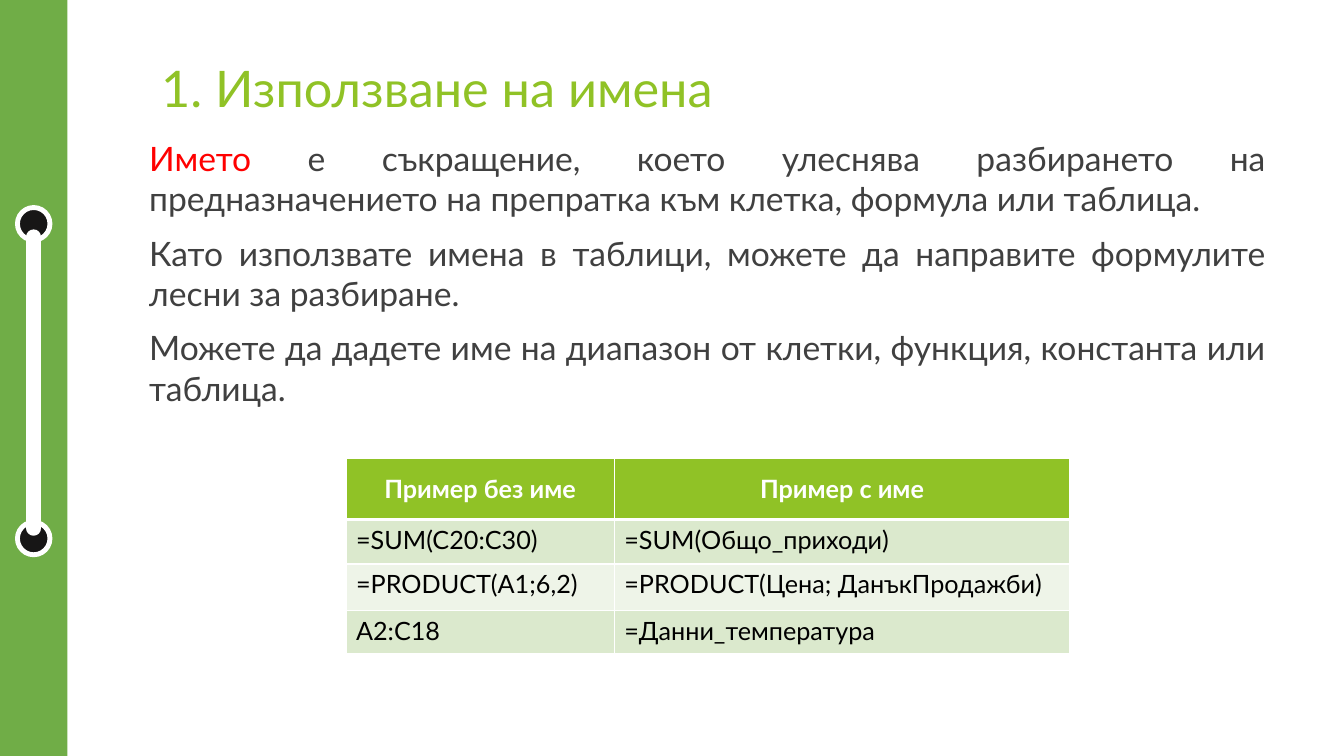
from lxml.etree import SubElement
from pptx import Presentation
from pptx.dml.color import RGBColor
from pptx.enum.shapes import MSO_CONNECTOR, MSO_SHAPE
from pptx.enum.text import MSO_ANCHOR, PP_ALIGN
from pptx.oxml.ns import qn
from pptx.util import Cm, Pt

FONT = "Lato"
GREEN, WHITE, DARK, RED = "90C226", "FFFFFF", "404040", "FF0000"
TITLE = [[("1. Използване на имена", GREEN)]]
BODY = [
    [("Името", RED),
     (" е съкращение, което улеснява разбирането на предназначението на "
      "препратка към клетка, формула или таблица.", DARK)],
    [("Като използвате имена в таблици, можете да направите формулите "
      "лесни за разбиране.", DARK)],
    [("Можете да дадете име на диапазон от клетки, функция, константа или "
      "таблица.", DARK)],
]
EXAMPLES = [
    ("Пример без име", "Пример с име"),
    ("=SUM(C20:C30)", "=SUM(Общо_приходи)"),
    ("=PRODUCT(A1;6,2)", "=PRODUCT(Цена; ДанъкПродажби)"),
    ("A2:C18", "=Данни_температура"),
]
COL_WIDTHS = (6.76, 11.48)
ROW_HEIGHTS = (1.55, 1.12, 1.17, 1.09)
ROW_FILLS = (GREEN, "DBE9CD", "EEF4E8", "DBE9CD")
BAR_WIDTH = 1.7
DOT_SIZE = 0.82
DOT_TOPS = (5.23, 13.16)
ROD = (5.97, 13.31)


def rgb(value):
    return RGBColor.from_string(value)


def add_run(p, text, size, color, bold=False):
    r = p.add_run()
    r.text = text
    r.font.name, r.font.size, r.font.bold = FONT, Pt(size), bold
    r.font.color.rgb = rgb(color)


def add_text(s, box, paragraphs, size, align=PP_ALIGN.LEFT, before=0):
    tf = s.shapes.add_textbox(*map(Cm, box)).text_frame
    tf.word_wrap = True
    for i, runs in enumerate(paragraphs):
        p = tf.paragraphs[0] if i == 0 else tf.add_paragraph()
        p.alignment, p.space_before = align, Pt(before)
        for text, color in runs:
            add_run(p, text, size, color)


def add_solid(s, kind, box, color, outline=0):
    sp = s.shapes.add_shape(kind, *map(Cm, box))
    sp.shadow.inherit = False
    sp.fill.solid()
    sp.fill.fore_color.rgb = rgb(color)
    if outline:
        sp.line.color.rgb, sp.line.width = rgb(WHITE), Pt(outline)
    else:
        sp.line.fill.background()


def add_border(cell, side, width):
    ln = SubElement(cell._tc.get_or_add_tcPr(), qn("a:ln" + side), w=str(Pt(width)))
    SubElement(SubElement(ln, qn("a:solidFill")), qn("a:srgbClr"), val=WHITE)


def add_rail(s):
    add_solid(s, MSO_SHAPE.RECTANGLE, (0, 0, BAR_WIDTH, 19.05), "70AD47")
    for top in DOT_TOPS:
        left = (BAR_WIDTH - DOT_SIZE) / 2
        add_solid(s, MSO_SHAPE.OVAL, (left, top, DOT_SIZE, DOT_SIZE), "171616", 3.5)
    x = Cm(BAR_WIDTH / 2)
    rod = s.shapes.add_connector(MSO_CONNECTOR.STRAIGHT, x, Cm(ROD[0]), x, Cm(ROD[1]))
    rod.line.color.rgb, rod.line.width = rgb(WHITE), Pt(10.75)
    rod.line._get_or_add_ln().set("cap", "rnd")
    SubElement(rod._element.spPr, qn("a:effectLst"))


def add_examples(s):
    size = Cm(sum(COL_WIDTHS)), Cm(sum(ROW_HEIGHTS))
    table = s.shapes.add_table(len(EXAMPLES), 2, Cm(8.72), Cm(11.54), *size).table
    table.horz_banding = False
    for col, width in zip(table.columns, COL_WIDTHS):
        col.width = Cm(width)
    for i, texts in enumerate(EXAMPLES):
        table.rows[i].height = Cm(ROW_HEIGHTS[i])
        header = i == 0
        for j, text in enumerate(texts):
            cell = table.cell(i, j)
            widths = {"L": 1, "R": 1, "T": 3 if i == 1 else 1, "B": 3 if header else 1}
            for side, width in widths.items():
                add_border(cell, side, width)
            cell.fill.solid()
            cell.fill.fore_color.rgb = rgb(ROW_FILLS[i])
            cell.vertical_anchor = MSO_ANCHOR.MIDDLE if header else MSO_ANCHOR.TOP
            p = cell.text_frame.paragraphs[0]
            p.alignment = PP_ALIGN.CENTER if header else PP_ALIGN.LEFT
            add_run(p, text, 18, WHITE if header else "000000", header)


def main():
    prs = Presentation()
    prs.slide_width, prs.slide_height = Cm(33.87), Cm(19.05)
    s = prs.slides.add_slide(prs.slide_layouts[6])
    add_rail(s)
    add_text(s, (3.81, 1.32, 23.52, 2.03), TITLE, 36)
    add_text(s, (3.51, 3.35, 28.63, 7.67), BODY, 24, PP_ALIGN.JUSTIFY, 10)
    add_examples(s)
    prs.save("out.pptx")


if __name__ == "__main__":
    main()
